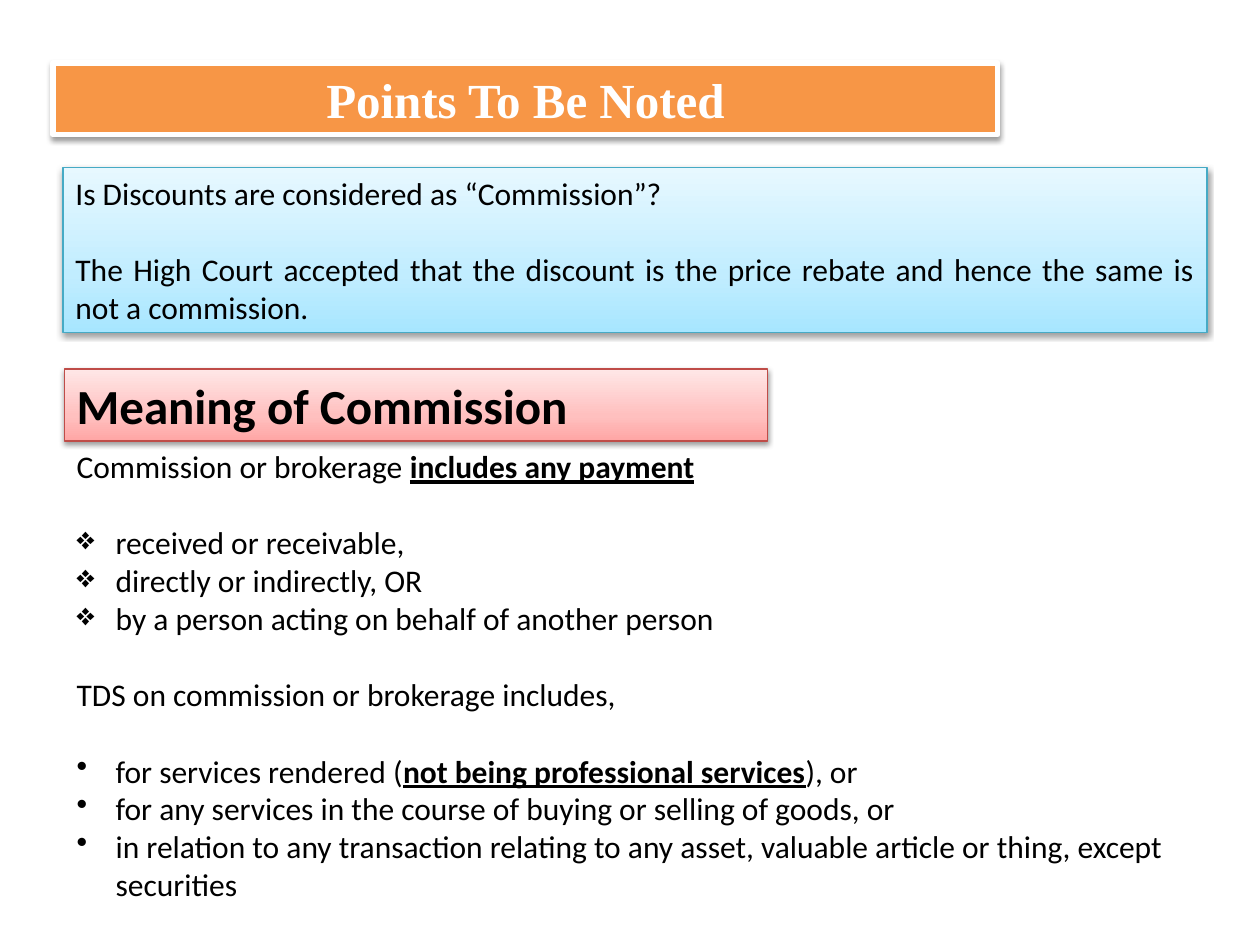
from lxml import etree
from pptx import Presentation
from pptx import util as u
from pptx.dml.color import RGBColor
from pptx.enum import shapes, text
from pptx.oxml import parse_xml
from pptx.oxml.ns import nsdecls, qn

BLACK = RGBColor(0x00, 0x00, 0x00)
WHITE = RGBColor(0xFF, 0xFF, 0xFF)
ORANGE = RGBColor(0xF7, 0x96, 0x46)
TEAL = RGBColor(0x46, 0xAA, 0xC5)
RED = RGBColor(0xBF, 0x4C, 0x48)
BLUES = [RGBColor(0xA7, 0xE6, 0xFF), RGBColor(0xC1, 0xED, 0xFF), RGBColor(0xE7, 0xF8, 0xFF)]
PINKS = [RGBColor(0xFF, 0xA6, 0xA5), RGBColor(0xFF, 0xC0, 0xBF), RGBColor(0xFF, 0xE7, 0xE7)]

BODY = {"name": "Calibri", "size": u.Pt(18)}
HEADING = {"name": "Calibri", "size": u.Pt(28), "bold": True}
TITLE = {"name": "Times New Roman", "size": u.Pt(28), "bold": True}
STRONG = {"bold": True, "underline": True}
LINE_GAP = u.Pt(22)
INDENT = u.Inches(0.31)
LEFT, CENTER, JUSTIFY = text.PP_ALIGN.LEFT, text.PP_ALIGN.CENTER, text.PP_ALIGN.JUSTIFY


def write_text(shape, paragraphs, font, color=BLACK):
    """Each paragraph is (runs, alignment, space before, bullet); odd runs are strong."""
    frame = shape.text_frame
    frame.word_wrap = True
    frame.vertical_anchor = text.MSO_ANCHOR.TOP
    for index, (runs, alignment, space, bullet) in enumerate(paragraphs):
        paragraph = frame.add_paragraph() if index else frame.paragraphs[0]
        paragraph.alignment = alignment
        paragraph.space_before = space
        if bullet:
            properties = paragraph._p.get_or_add_pPr()
            properties.set("marL", str(INDENT))
            properties.set("indent", str(-INDENT))
            etree.SubElement(properties, qn("a:buChar"), char=bullet)
        for position, words in enumerate(runs):
            run = paragraph.add_run()
            run.text = words
            run.font.color.rgb = color
            for key, value in {**font, **(STRONG if position % 2 else {})}.items():
                setattr(run.font, key, value)


presentation = Presentation()
presentation.slide_width, presentation.slide_height = u.Inches(10), u.Inches(7.5)
slide = presentation.slides.add_slide(presentation.slide_layouts[6])

discount_text = [
    (["Is Discounts are considered as “Commission”?"], LEFT, 0, None),
    (["The High Court accepted that the discount is the price rebate "
      "and hence the same is not a commission."], JUSTIFY, LINE_GAP, None),
]
# position and size, fill, line colour, line width, paragraphs, font, text colour
panels = [
    ((0.42, 0.5, 7.5, 0.57), [ORANGE], WHITE, 3,
     [(["Points To Be Noted"], CENTER, 0, None)], TITLE, WHITE),
    ((0.5, 1.33, 9.08, 1.31), BLUES, TEAL, 0.75, discount_text, BODY, BLACK),
    ((0.51, 2.93, 5.58, 0.57), PINKS, RED, 0.75,
     [(["Meaning of Commission"], LEFT, 0, None)], HEADING, BLACK),
]
for box, colors, line_color, line_width, paragraphs, font, color in panels:
    panel = slide.shapes.add_shape(shapes.MSO_SHAPE.RECTANGLE, *map(u.Inches, box))
    if len(colors) == 1:
        panel.fill.solid()
        panel.fill.fore_color.rgb = colors[0]
    else:
        panel.fill.gradient()
        panel.fill.gradient_angle = 90
        stops = panel._element.spPr.find(".//" + qn("a:gsLst"))
        for stop in list(stops):
            stops.remove(stop)
        for percent, stop_color in zip((0, 35, 100), colors):
            stop = etree.SubElement(stops, qn("a:gs"), pos=str(percent * 1000))
            etree.SubElement(stop, qn("a:srgbClr"), val=str(stop_color))
    panel.line.color.rgb = line_color
    panel.line.width = u.Pt(line_width)
    panel.shadow.inherit = False
    panel._element.spPr.find(qn("a:effectLst")).append(parse_xml(
        f'<a:outerShdw {nsdecls("a")} blurRad="40000" dist="20000" dir="5400000" rotWithShape="0">'
        '<a:srgbClr val="000000"><a:alpha val="38000"/></a:srgbClr></a:outerShdw>'))
    write_text(panel, paragraphs, font, color)

meaning = slide.shapes.add_textbox(*map(u.Inches, (0.51, 3.5, 9.08, 3.74)))
write_text(meaning, [
    (["Commission or brokerage ", "includes any payment"], LEFT, 0, None),
    (["received or receivable,"], LEFT, LINE_GAP, "❖"),
    (["directly or indirectly, OR"], LEFT, 0, "❖"),
    (["by a person acting on behalf of another person"], LEFT, 0, "❖"),
    (["TDS on commission or brokerage includes,"], LEFT, LINE_GAP, None),
    (["for services rendered (", "not being professional services", "), or"], LEFT, LINE_GAP, "•"),
    (["for any services in the course of buying or selling of goods, or"], LEFT, 0, "•"),
    (["in relation to any transaction relating to any asset, valuable article "
      "or thing, except securities"], LEFT, 0, "•"),
], BODY)

presentation.save("out.pptx")
